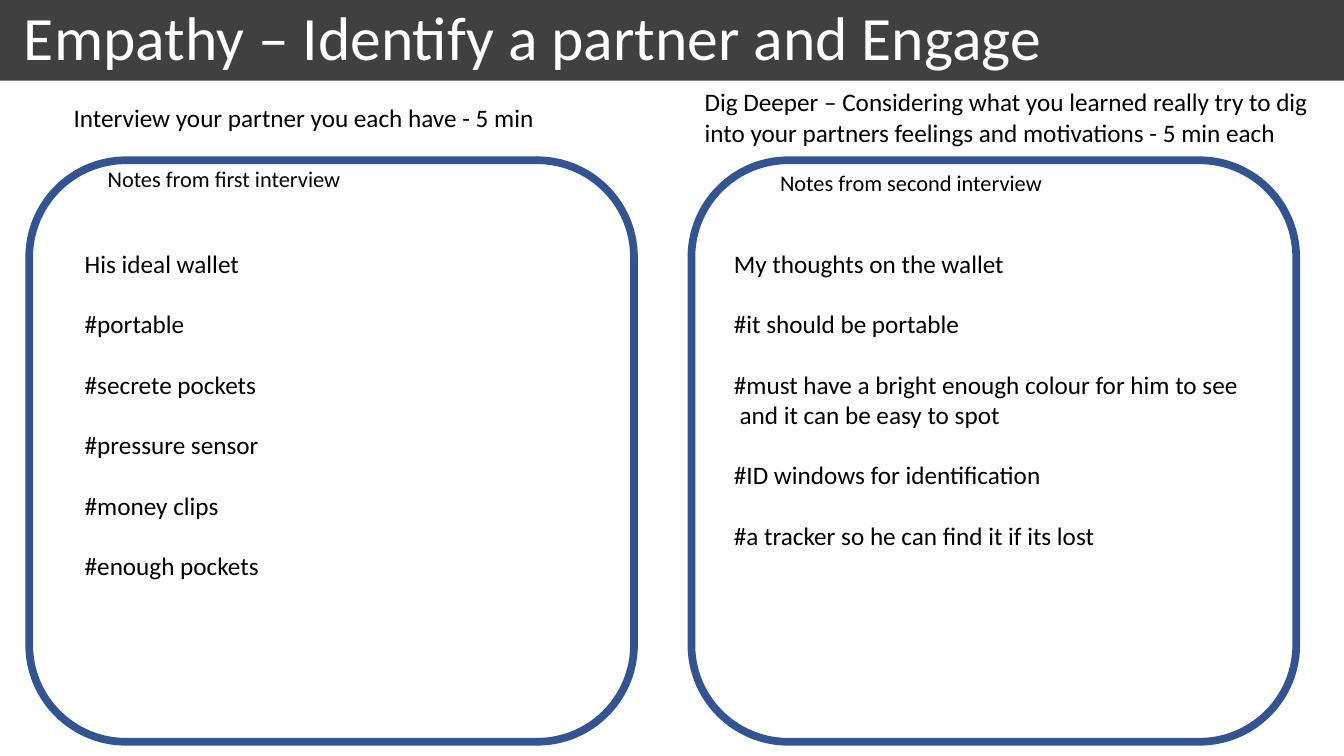
from lxml import etree
from pptx import Presentation
from pptx.dml.color import RGBColor
from pptx.enum.shapes import MSO_SHAPE as Shape
from pptx.enum.text import MSO_ANCHOR as Anchor, MSO_AUTO_SIZE as AutoSize, PP_ALIGN as Align
from pptx.oxml.ns import qn
from pptx.util import Pt

COLORS = {"bar": "404040", "border": "325491", "title": "FFFFFF", "text": "000000"}
COMPARISON_LAYOUT = 4
LINE_HEIGHT = 21.6

# Frames are left, top, width, height in points
columns = [
    {
        "box_left": 20.9,
        "heading": "Interview your partner you each have - 5 min",
        "heading_frame": (45.4, 69.8, 418.3, 28.8),
        "caption": "Notes from first interview",
        "caption_frame": (69.8, 114.5, 243.4, 26.6),
        "notes": ["His ideal wallet", "#portable", "#secrete pockets",
                  "#pressure sensor", "#money clips", "#enough pockets"],
        "notes_frame": (53.3, 173.5, 390, 247),
    },
    {
        "box_left": 493.9,
        "heading": "Dig Deeper – Considering what you learned really try to dig "
                   "into your partners feelings and motivations - 5 min each",
        "heading_frame": (496.1, 58.3, 452.2, 51.1),
        "caption": "Notes from second interview",
        "caption_frame": (550.1, 117.4, 243.4, 26.6),
        "notes": ["My thoughts on the wallet", "#it should be portable",
                  "#must have a bright enough colour for him to see",
                  " and it can be easy to spot",
                  "#ID windows for identification",
                  "#a tracker so he can find it if its lost"],
        "notes_frame": (517, 173.5, 400, 247),
    },
]


def place(shape, frame):
    shape.left, shape.top, shape.width, shape.height = [Pt(length) for length in frame]


def write(shape, lines, size, color="text", anchor=Anchor.TOP):
    """Fill a text shape with plain left-aligned paragraphs, without bullets."""
    text_frame = shape.text_frame
    text_frame.text = "\n".join(lines)
    text_frame.word_wrap = True
    text_frame.auto_size = AutoSize.NONE
    text_frame.vertical_anchor = anchor
    for paragraph in text_frame.paragraphs:
        paragraph.alignment = Align.LEFT
        paragraph.space_before = Pt(0)
        properties = paragraph._p.get_or_add_pPr()
        properties.set("marL", "0")
        properties.set("indent", "0")
        etree.SubElement(properties, qn("a:buNone"))
        for run in paragraph.runs:
            run.font.name = "Calibri"
            run.font.size = Pt(size)
            run.font.bold = False
            run.font.color.rgb = RGBColor.from_string(COLORS[color])


presentation = Presentation()
presentation.slide_width = Pt(960)
presentation.slide_height = Pt(540)
slide = presentation.slides.add_slide(presentation.slide_layouts[COMPARISON_LAYOUT])
shapes = slide.shapes

# Title on a dark bar
title = shapes.title
title_frame = (0, 0, 960, 57.6)
bar = shapes.add_shape(Shape.RECTANGLE, *[Pt(length) for length in title_frame])
bar.shadow.inherit = False
bar.fill.solid()
bar.fill.fore_color.rgb = RGBColor.from_string(COLORS["bar"])
bar.line.fill.background()
title._element.addprevious(bar._element)
place(title, title_frame)
write(title, [" Empathy – Identify a partner and Engage"], 44, "title", Anchor.MIDDLE)
title.text_frame.paragraphs[0].line_spacing = 0.9

# Two interview columns; the layout pairs placeholders 1-2 and 3-4
for index, column in enumerate(columns):
    heading = slide.placeholders[2 * index + 1]
    place(heading, column["heading_frame"])
    write(heading, [column["heading"]], 18)

    box = shapes.add_shape(Shape.ROUNDED_RECTANGLE, Pt(column["box_left"]), Pt(114.5),
                           Pt(432), Pt(415.4))
    box.shadow.inherit = False
    box.fill.background()
    box.line.color.rgb = RGBColor.from_string(COLORS["border"])
    box.line.width = Pt(5.5)

    caption = shapes.add_textbox(*[Pt(length) for length in column["caption_frame"]])
    write(caption, [column["caption"]], 16)

    notes = slide.placeholders[2 * index + 2]
    place(notes, column["notes_frame"])
    write(notes, column["notes"], 18)
    for paragraph in notes.text_frame.paragraphs[1:]:
        continues = paragraph.text.startswith(" ")
        paragraph.space_before = Pt(0 if continues else LINE_HEIGHT)

presentation.save("out.pptx")
